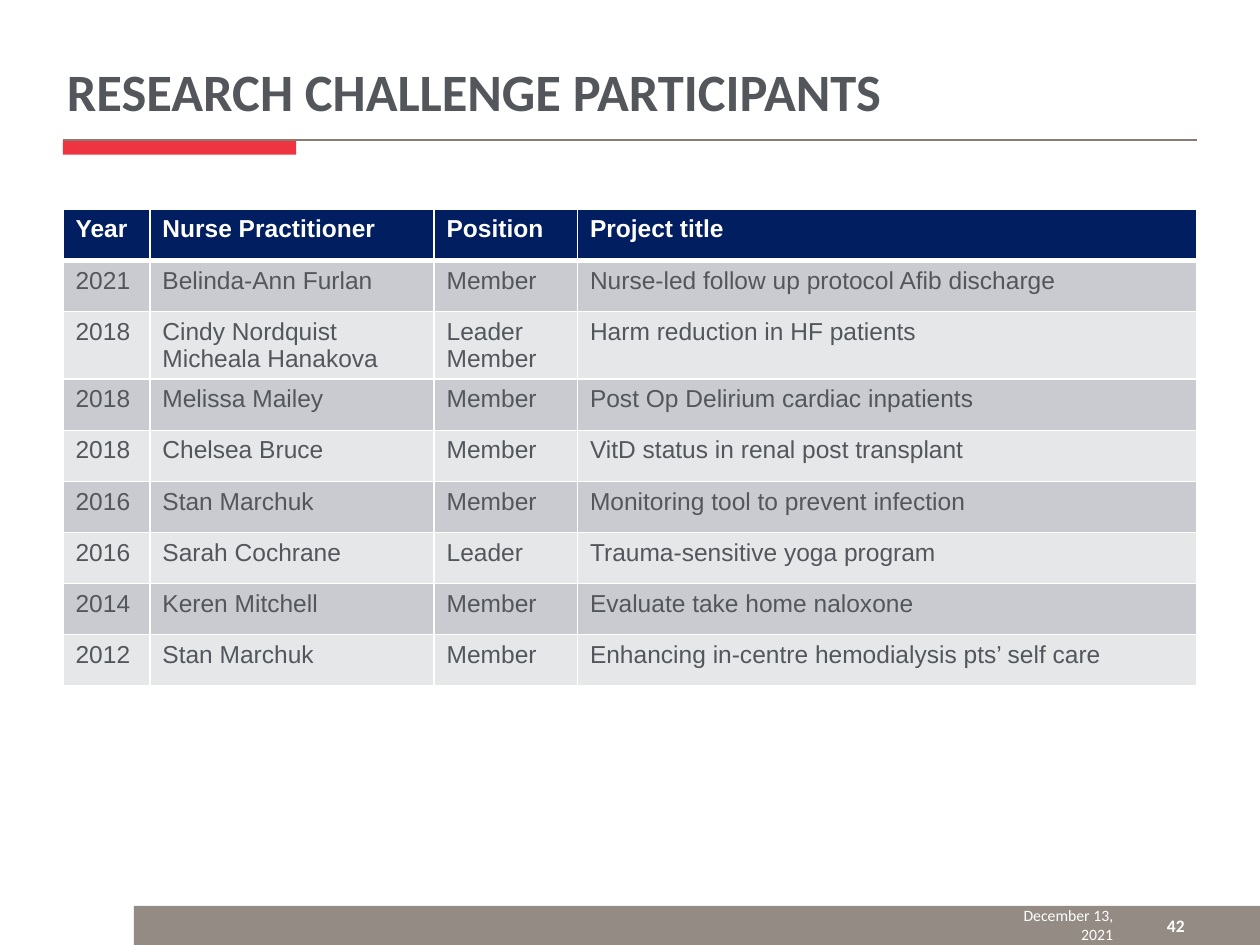
from typing import NamedTuple

from lxml.etree import SubElement
from pptx import Presentation
from pptx.dml.color import RGBColor
from pptx.enum.shapes import MSO_CONNECTOR, MSO_SHAPE
from pptx.enum.text import MSO_ANCHOR, PP_ALIGN
from pptx.oxml.ns import qn
from pptx.util import Cm, Pt

WHITE = RGBColor(0xFF, 0xFF, 0xFF)
SLATE = RGBColor(0x53, 0x56, 0x5A)
NAVY = RGBColor(0x00, 0x1E, 0x60)
RED = RGBColor(0xEE, 0x34, 0x41)
TAUPE = RGBColor(0x94, 0x8B, 0x84)
RULE_BROWN = RGBColor(0x8A, 0x7C, 0x74)
BANDS = (RGBColor(0xCA, 0xCB, 0xD1), RGBColor(0xE6, 0xE7, 0xE9))


class Area(NamedTuple):
    left: float
    top: float
    width: float
    height: float

    def lengths(self) -> list:
        return [Cm(value) for value in self]


class Style(NamedTuple):
    font: str
    size: float
    color: RGBColor
    bold: bool = False


class Bar(NamedTuple):
    area: Area
    color: RGBColor


class FooterText(NamedTuple):
    area: Area
    text: str
    style: Style


class Participant(NamedTuple):
    year: str
    name: str
    position: str
    project: str


BARS = (
    Bar(Area(2.7, 18.26, 22.7, 0.79), TAUPE),
    Bar(Area(1.27, 2.82, 4.7, 0.3), RED),
)
FOOTER = (
    FooterText(Area(20.12, 18.14, 2.57, 1.02), "December 13, 2021", Style("Calibri", 9, WHITE)),
    FooterText(Area(22.94, 18.14, 1.19, 1.02), "42", Style("Calibri", 10, WHITE, True)),
)
TITLE_STYLE = Style("Calibri", 30, SLATE, True)
HEADER_STYLE = Style("Arial", 14, WHITE, True)
BODY_STYLE = Style("Arial", 14, SLATE)
COLUMN_WIDTHS = (1.75, 5.73, 2.89, 12.49)
ROW_HEIGHT = 1.03
HEADER = Participant("Year", "Nurse Practitioner", "Position", "Project title")
PARTICIPANTS = (
    Participant("2021", "Belinda-Ann Furlan", "Member", "Nurse-led follow up protocol Afib discharge"),
    Participant("2018", "Cindy Nordquist Micheala Hanakova", "Leader\nMember", "Harm reduction in HF patients"),
    Participant("2018", "Melissa Mailey", "Member", "Post Op Delirium cardiac inpatients"),
    Participant("2018", "Chelsea Bruce", "Member", "VitD status in renal post transplant"),
    Participant("2016", "Stan Marchuk", "Member", "Monitoring tool to prevent infection"),
    Participant("2016", "Sarah Cochrane", "Leader", "Trauma-sensitive yoga program"),
    Participant("2014", "Keren Mitchell", "Member", "Evaluate take home naloxone"),
    Participant("2012", "Stan Marchuk", "Member", "Enhancing in-centre hemodialysis pts’ self care"),
)


def write(frame, text: str, style: Style, align: PP_ALIGN = PP_ALIGN.LEFT) -> None:
    for index, line in enumerate(text.split("\n")):
        para = frame.add_paragraph() if index else frame.paragraphs[0]
        para.alignment = align
        span = para.add_run()
        span.text = line
        span.font.name = style.font
        span.font.size = Pt(style.size)
        span.font.bold = style.bold
        span.font.color.rgb = style.color


def draw_bar(page, bar: Bar) -> None:
    shape = page.shapes.add_shape(MSO_SHAPE.RECTANGLE, *bar.area.lengths())
    shape.shadow.inherit = False
    shape.fill.solid()
    shape.fill.fore_color.rgb = bar.color
    shape.line.fill.background()


def draw_rule(page) -> None:
    rule = page.shapes.add_connector(MSO_CONNECTOR.STRAIGHT, Cm(1.27), Cm(2.82), Cm(24.13), Cm(2.82))
    rule.line.color.rgb = RULE_BROWN
    rule.line.width = Pt(1)
    SubElement(rule._element.spPr, qn("a:effectLst"))


def draw_title(page, text: str) -> None:
    title = page.shapes.title
    title.left, title.top, title.width, title.height = Area(1.35, 0.53, 21.89, 2.06).lengths()
    frame = title.text_frame
    frame.word_wrap = True
    frame.vertical_anchor = MSO_ANCHOR.BOTTOM
    frame.margin_left, frame.margin_right = Cm(0), Cm(0.3)
    write(frame, text, TITLE_STYLE)


def draw_footer_text(page, item: FooterText) -> None:
    box = page.shapes.add_textbox(*item.area.lengths())
    frame = box.text_frame
    frame.word_wrap = True
    frame.vertical_anchor = MSO_ANCHOR.MIDDLE
    write(frame, item.text, item.style, PP_ALIGN.RIGHT)


def set_borders(cell, widths: dict[str, float]) -> None:
    properties = cell._tc.get_or_add_tcPr()
    for position, (side, width) in enumerate(widths.items()):
        border = SubElement(properties, qn(f"a:{side}"), w=str(Pt(width)))
        fill = SubElement(border, qn("a:solidFill"))
        SubElement(fill, qn("a:srgbClr"), val=str(WHITE))
        properties.insert(position, border)  # borders come before the cell fill


def draw_table(page) -> None:
    rows = (HEADER, *PARTICIPANTS)
    area = Area(1.27, 4.22, sum(COLUMN_WIDTHS), ROW_HEIGHT * len(rows))
    table = page.shapes.add_table(len(rows), len(COLUMN_WIDTHS), *area.lengths()).table
    for column, width in zip(table.columns, COLUMN_WIDTHS):
        column.width = Cm(width)
    for index, values in enumerate(rows):
        table.rows[index].height = Cm(ROW_HEIGHT)
        is_header = index == 0
        for column, text in enumerate(values):
            cell = table.cell(index, column)
            cell.fill.solid()
            cell.fill.fore_color.rgb = NAVY if is_header else BANDS[(index - 1) % 2]
            write(cell.text_frame, text, HEADER_STYLE if is_header else BODY_STYLE)
            set_borders(cell, {
                "lnL": 1,
                "lnR": 1,
                "lnT": 3 if index == 1 else 1,
                "lnB": 3 if is_header else 1,
            })


def main() -> None:
    deck = Presentation()
    deck.slide_width, deck.slide_height = Cm(25.4), Cm(19.05)
    page = deck.slides.add_slide(deck.slide_layouts[5])

    # Bars and title rule
    for bar in BARS:
        draw_bar(page, bar)
    draw_rule(page)

    # Title and table
    draw_title(page, "RESEARCH CHALLENGE PARTICIPANTS")
    draw_table(page)

    # Date and page number
    for item in FOOTER:
        draw_footer_text(page, item)

    deck.save("out.pptx")


if __name__ == "__main__":
    main()
